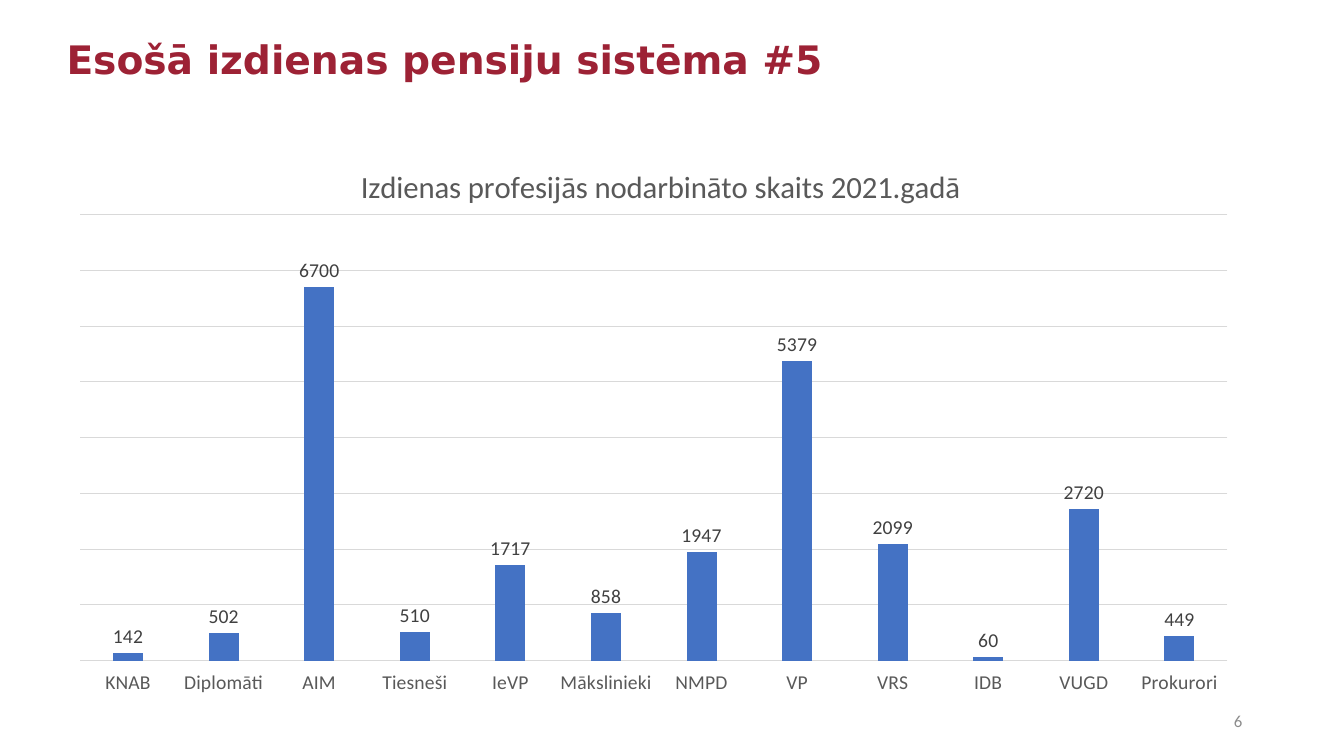
from lxml.etree import fromstring
from pptx import Presentation
from pptx.chart.data import CategoryChartData
from pptx.dml.color import RGBColor
from pptx.enum.chart import XL_CHART_TYPE as ChartType
from pptx.enum.chart import XL_LABEL_POSITION as LabelPosition
from pptx.enum.chart import XL_TICK_LABEL_POSITION as TickLabels
from pptx.enum.chart import XL_TICK_MARK as TickMark
from pptx.enum.text import MSO_ANCHOR as Anchor
from pptx.enum.text import PP_ALIGN as Align
from pptx.oxml.ns import nsdecls, qn
from pptx.util import Inches, Pt

WIDTH, HEIGHT = 13.33, 7.5
LEFT = 0.56
GRID_GREY = "D9D9D9"
EMPLOYED = {
    "KNAB": 142, "Diplomāti": 502, "AIM": 6700, "Tiesneši": 510,
    "IeVP": 1717, "Mākslinieki": 858, "NMPD": 1947, "VP": 5379,
    "VRS": 2099, "IDB": 60, "VUGD": 2720, "Prokurori": 449,
}


def rgb(code):
    """Turn a hex string into a colour."""
    return RGBColor.from_string(code)


def style(font, size, color, face="Calibri", bold=False):
    """Set face, size, colour and weight of a font."""
    font.name, font.size, font.bold = face, Pt(size), bold
    font.color.rgb = rgb(color)


def rule(line, color=GRID_GREY):
    """Draw a thin chart line."""
    line.color.rgb = rgb(color)
    line.width = Pt(0.75)


def layout(x, y, w=None, h=None, inner=False):
    """Return a manual chart layout in shares of the chart's size."""
    parts = ['<c:layoutTarget val="inner"/>'] if inner else []
    parts += ['<c:xMode val="edge"/>', '<c:yMode val="edge"/>']
    shares = {"x": x, "y": y, "w": w, "h": h}
    parts += [f'<c:{key} val="{share}"/>' for key, share in shares.items() if share is not None]
    return fromstring(
        f'<c:layout {nsdecls("c")}><c:manualLayout>{"".join(parts)}</c:manualLayout></c:layout>'
    )


def clear_layout(element):
    """Remove any automatic layout from a chart element."""
    for old in element.findall(qn("c:layout")):
        element.remove(old)


def add_heading(slide, text):
    """Place and format the slide title."""
    heading = slide.shapes.title
    heading.left, heading.top = Inches(LEFT), Inches(0.15)
    heading.width, heading.height = Inches(11.5), Inches(0.92)
    frame = heading.text_frame
    frame.text = text
    frame.vertical_anchor = Anchor.MIDDLE
    line = frame.paragraphs[0]
    line.alignment, line.line_spacing = Align.LEFT, 0.9
    style(line.runs[0].font, 28, "9D2235", "DejaVu Sans", True)


def add_page_number(slide, number):
    """Put the page number at the lower right."""
    frame = slide.shapes.add_textbox(Inches(9.42), Inches(6.95), Inches(3), Inches(0.4)).text_frame
    frame.word_wrap = True
    frame.vertical_anchor = Anchor.MIDDLE
    frame.text = number
    frame.paragraphs[0].alignment = Align.RIGHT
    style(frame.paragraphs[0].runs[0].font, 12, "8C8C8C")


def format_axes(chart):
    """Show the category names and the grid, and hide the value axis."""
    professions, counts = chart.category_axis, chart.value_axis
    professions.major_tick_mark = TickMark.NONE
    professions.tick_label_position = TickLabels.LOW
    style(professions.tick_labels.font, 14, "595959")
    rule(professions.format.line)
    counts.minimum_scale, counts.maximum_scale, counts.major_unit = 0, 8000, 1000
    counts.visible = False
    rule(counts.major_gridlines.format.line)


def format_columns(plot):
    """Set the colour, gaps and value labels of the columns."""
    plot.gap_width, plot.overlap = 219, -27
    plot.vary_by_categories = False
    columns = plot.series[0]
    columns.format.fill.solid()
    columns.format.fill.fore_color.rgb = rgb("4472C4")
    labels = columns.data_labels
    labels.show_value = True
    labels.position = LabelPosition.OUTSIDE_END
    style(labels.font, 14, "404040")


def add_column_chart(slide, caption, counts):
    """Add a titled column chart."""
    data = CategoryChartData()
    data.categories = list(counts)
    data.add_series("Series 1", list(counts.values()))
    chart = slide.shapes.add_chart(
        ChartType.COLUMN_CLUSTERED,
        Inches(LEFT), Inches(1.3), Inches(11.85), Inches(5.65), data,
    ).chart
    style(chart.font, 14, "000000")
    chart.has_legend = False
    title = chart.chart_title
    title.text_frame.text = caption
    style(title.text_frame.paragraphs[0].runs[0].font, 22, "595959")
    format_axes(chart)
    format_columns(chart.plots[0])
    title_xml = chart.element.find(".//" + qn("c:title"))
    clear_layout(title_xml)
    title_xml.find(qn("c:tx")).addnext(layout(0.25, 0.05))
    plot_area = chart.element.find(".//" + qn("c:plotArea"))
    clear_layout(plot_area)
    plot_area.insert(0, layout(0.02, 0.147, 0.96, 0.783, inner=True))


def main():
    """Build and save the slide."""
    deck = Presentation()
    deck.slide_width, deck.slide_height = Inches(WIDTH), Inches(HEIGHT)
    slide = deck.slides.add_slide(deck.slide_layouts[5])
    add_heading(slide, "Esošā izdienas pensiju sistēma #5")
    add_column_chart(slide, "Izdienas profesijās nodarbināto skaits 2021.gadā", EMPLOYED)
    add_page_number(slide, "6")
    deck.save("out.pptx")


if __name__ == "__main__":
    main()
